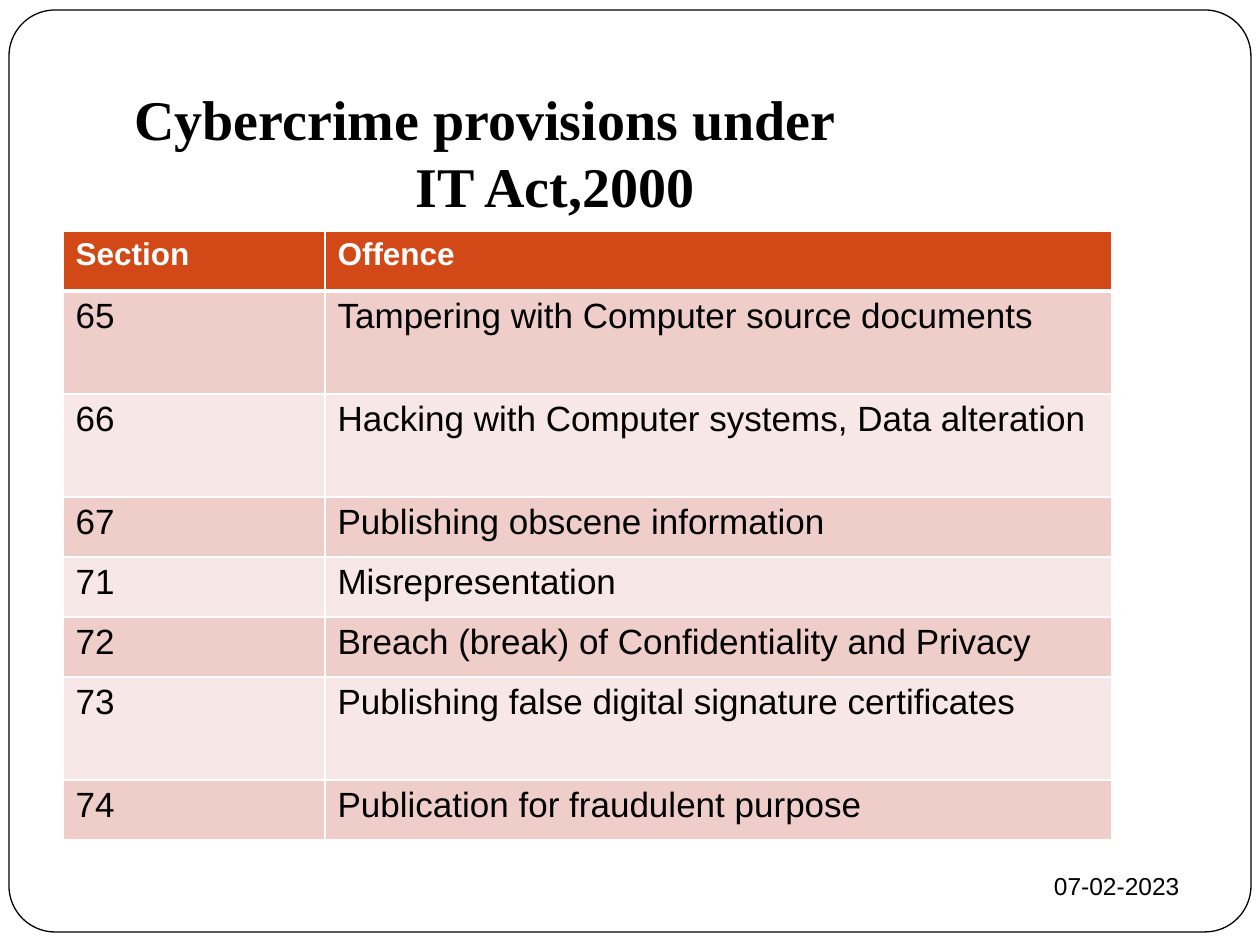
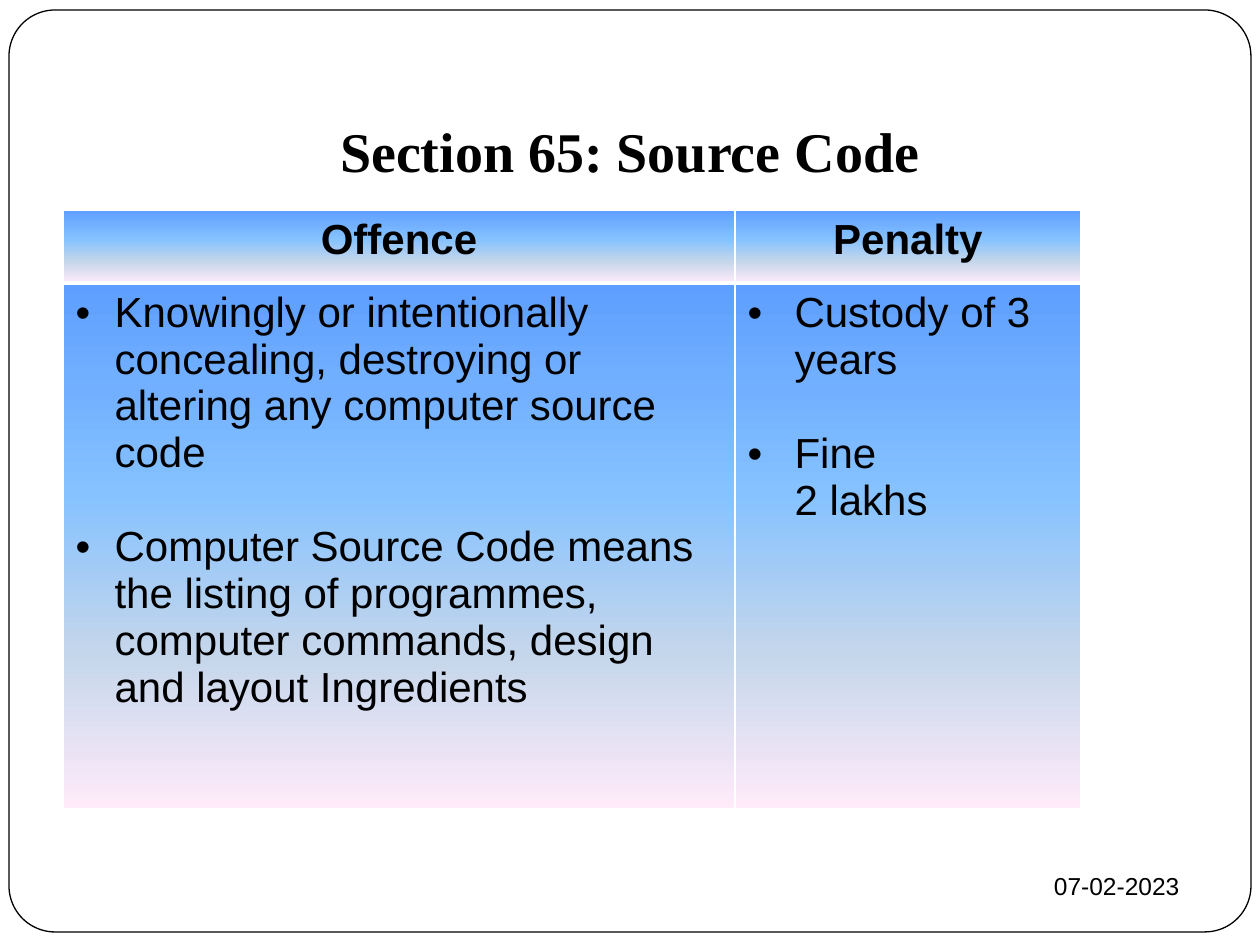
from dataclasses import dataclass

from pptx import Presentation
from pptx.dml.color import RGBColor
from pptx.enum.shapes import MSO_SHAPE as Shape
from pptx.enum.text import MSO_ANCHOR as Anchor, PP_ALIGN as Align
from pptx.oxml import parse_xml
from pptx.oxml.ns import nsdecls
from pptx.util import Emu, Pt

# Shared look
BLACK, WHITE = "000000", "FFFFFF"
HEAD, BANDS = "D34817", ("EFCECA", "F7E8E7")
SKY = ((0, "5E9EFF"), (20, "72B0FF"), (40, "85C2FF"), (70, "C4D6EB"), (100, "FFEBFA"))
SERIF, SANS = "Times New Roman", "Arial"
DATE = "07-02-2023"


@dataclass
class Box:
    left: int
    top: int
    width: int
    height: int


@dataclass
class Para:
    text: str
    size: int
    bold: bool = False
    color: str = BLACK
    face: str = SANS
    align: Align = Align.LEFT
    margin: int = 0
    bullet: bool = False
    after: int = 0


def px(n: int) -> Emu:
    return Emu(round(n * 914400 / 126))


def rgb(code: str) -> RGBColor:
    return RGBColor.from_string(code)


def place(box: Box) -> tuple:
    return px(box.left), px(box.top), px(box.width), px(box.height)


def xml(tag: str, body: str):
    """Parse one drawing element; tag may carry attributes."""
    name, _, rest = tag.partition(" ")
    return parse_xml(f"<a:{name} {nsdecls('a')} {rest}>{body}</a:{name}>")


def solid(code: str) -> str:
    return f'<a:solidFill><a:srgbClr val="{code}"/></a:solidFill>'


# Text
def write(frame, paras: list[Para]) -> None:
    frame.word_wrap = True
    for i, item in enumerate(paras):
        para = frame.add_paragraph() if i else frame.paragraphs[0]
        para.text = item.text
        para.alignment = item.align
        prop = para._p.get_or_add_pPr()
        if item.margin:
            prop.set("marL", str(px(item.margin)))
            prop.set("indent", str(-px(item.margin) if item.bullet else 0))
        if item.bullet:
            prop.append(xml("buClr", f'<a:srgbClr val="{BLACK}"/>'))
            prop.append(xml(f'buFont typeface="{SANS}"', ""))
            prop.append(xml('buChar char="•"', ""))
        if item.after:
            para.space_after = Pt(item.after)
        font = para.font
        font.name, font.size, font.bold = item.face, Pt(item.size), item.bold
        font.color.rgb = rgb(item.color)


def label(slide, box: Box, paras: list[Para], anchor: Anchor, foot: int = 6) -> None:
    frame = slide.shapes.add_textbox(*place(box)).text_frame
    frame.vertical_anchor = anchor
    frame.margin_bottom = px(foot)
    write(frame, paras)


def title(text: str, align: Align = Align.CENTER, margin: int = 0) -> Para:
    return Para(text, 32, True, face=SERIF, align=align, margin=margin)


# Frame and date on each slide
def start(deck):
    slide = deck.slides.add_slide(deck.slide_layouts[6])
    edge = slide.shapes.add_shape(Shape.ROUNDED_RECTANGLE, *place(Box(9, 10, 1242, 922)))
    edge.adjustments[0] = 0.05
    edge.shadow.inherit = False
    edge.fill.solid()
    edge.fill.fore_color.rgb = rgb(WHITE)
    edge.line.color.rgb = rgb(BLACK)
    edge.line.width = Pt(0.75)
    label(slide, Box(851, 853, 341, 66), [Para(DATE, 14, align=Align.RIGHT)], Anchor.MIDDLE)
    return slide


# Tables
def border(cell, row: int) -> None:
    wide = {"T": 3 if row == 1 else 1, "B": 1 if row else 3}
    prop = cell._tc.get_or_add_tcPr()
    for i, side in enumerate("LRTB"):
        width = Pt(wide.get(side, 1))
        prop.insert(i, xml(f'ln{side} w="{width}"', solid(WHITE)))


def paint(cell, fill) -> None:
    if isinstance(fill, str):
        cell.fill.solid()
        cell.fill.fore_color.rgb = rgb(fill)
        return
    stops = "".join(f'<a:gs pos="{at * 1000}"><a:srgbClr val="{code}"/></a:gs>'
                    for at, code in fill)
    body = f'<a:gsLst>{stops}</a:gsLst><a:lin ang="5400000" scaled="0"/>'
    cell._tc.get_or_add_tcPr().append(xml("gradFill", body))


def grid(slide, left: int, top: int, cols: list[int], rows: list[int],
         cells: list, fills: list, head: bool) -> None:
    box = Box(left, top, sum(cols), sum(rows))
    table = slide.shapes.add_table(len(rows), len(cols), *place(box)).table
    table.first_row, table.horz_banding = head, False
    for col, width in zip(table.columns, cols):
        col.width = px(width)
    for r, height in enumerate(rows):
        table.rows[r].height = px(height)
        for c, paras in enumerate(cells[r]):
            cell = table.cell(r, c)
            write(cell.text_frame, paras)
            paint(cell, fills[r])
            border(cell, r)


# Slide 1: list of provisions
def acts(deck) -> None:
    slide = start(deck)
    label(slide, Box(63, 78, 998, 147),
          [title("Cybercrime provisions under", Align.LEFT, 59),
           title("IT Act,2000", Align.LEFT, 340)], Anchor.TOP)
    low, tall = 60, 103
    laws = [
        ("65", "Tampering with Computer source documents", tall),
        ("66", "Hacking with Computer systems, Data alteration", tall),
        ("67", "Publishing obscene information", low),
        ("71", "Misrepresentation", low),
        ("72", "Breach (break) of Confidentiality and Privacy", low),
        ("73", "Publishing false digital signature certificates", tall),
        ("74", "Publication for fraudulent purpose", low),
    ]
    cells = [[[Para(name, 18, True, WHITE)] for name in ("Section", "Offence")]]
    cells += [[[Para(code, 20)], [Para(text, 20)]] for code, text, _ in laws]
    fills = [HEAD] + [BANDS[i % 2] for i in range(len(laws))]
    rows = [low] + [law[2] for law in laws]
    grid(slide, 63, 231, [262, 787], rows, cells, fills, True)


# Slide 2: offence and penalty
def source(deck) -> None:
    slide = start(deck)
    label(slide, Box(63, 63, 1134, 134), [title("Section 65: Source Code")],
          Anchor.BOTTOM, 13)
    head = [[Para(name, 24, True, align=Align.CENTER)] for name in ("Offence", "Penalty")]
    crime = [
        Para("Knowingly or intentionally concealing, destroying or altering "
             "any computer source code", 24, margin=39, bullet=True, after=27),
        Para("Computer Source Code means the listing of programmes, computer "
             "commands, design and layout Ingredients", 24, margin=39, bullet=True),
    ]
    cost = [
        Para("Custody of 3 years", 24, margin=47, bullet=True, after=27),
        Para("Fine", 24, margin=47, bullet=True),
        Para("2 lakhs", 24, margin=47),
    ]
    grid(slide, 63, 210, [672, 346], [73, 526], [head, [crime, cost]], [SKY, SKY], False)


def main() -> None:
    deck = Presentation()
    deck.slide_width, deck.slide_height = px(1260), px(945)
    acts(deck)
    source(deck)
    deck.save("out.pptx")


if __name__ == "__main__":
    main()
